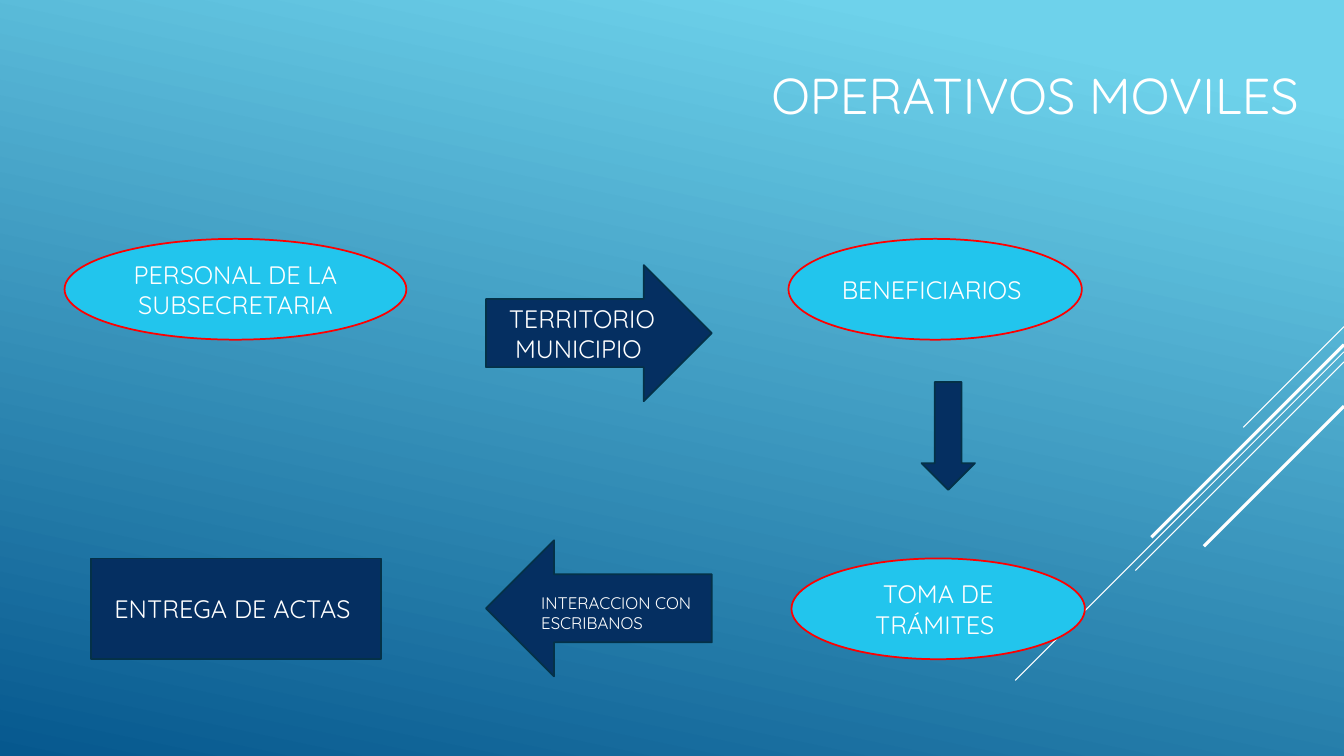
from dataclasses import dataclass

from lxml.etree import SubElement
from pptx import Presentation
from pptx.dml.color import RGBColor
from pptx.enum.shapes import MSO_CONNECTOR, MSO_SHAPE as Preset
from pptx.enum.text import MSO_ANCHOR as Anchor, MSO_AUTO_SIZE as AutoSize, PP_ALIGN as Align
from pptx.oxml.ns import qn
from pptx.slide import Slide
from pptx.text.text import TextFrame
from pptx.util import Inches, Pt

COLORS = {
    "white": "FFFFFF",
    "sky": "6ED2EB",
    "ocean": "06588E",
    "cyan": "22C5ED",
    "red": "FF0000",
    "navy": "052F61",
    "navy_edge": "043148",
}
FONT = "Quicksand"
SLIDE_WIDTH, SLIDE_HEIGHT = 13.33, 7.5
TOP_ROW, BOTTOM_ROW = 2.37, 5.54
BOX_HEIGHT = 1.0
ARROW_LEFT, ARROW_WIDTH, ARROW_HEIGHT = 4.82, 2.24, 1.35


@dataclass
class Diagonal:
    top: float
    reach: float
    weight: float


@dataclass
class Step:
    preset: Preset
    left: float
    top: float
    width: float
    height: float
    fill: str
    edge: str
    lines: tuple[str, ...] = ()
    rotation: float = 0


DIAGONALS = [
    Diagonal(3.24, 1.0, 0.75),
    Diagonal(3.49, 3.26, 0.75),
    Diagonal(3.59, 2.07, 0.75),
    Diagonal(3.42, 1.91, 2.25),
    Diagonal(4.03, 1.39, 2.25),
]


def ellipse(left: float, top: float, width: float, text: str) -> Step:
    return Step(Preset.OVAL, left, top, width, BOX_HEIGHT, "cyan", "red", (text,))


def navy(preset: Preset, left: float, top: float, width: float, height: float,
         lines: tuple[str, ...] = (), rotation: float = 0) -> Step:
    return Step(preset, left, top, width, height, "navy", "navy_edge", lines, rotation)


STEPS = [
    ellipse(0.64, TOP_ROW, 3.39, "PERSONAL DE LA SUBSECRETARIA"),
    ellipse(7.82, TOP_ROW, 2.91, "BENEFICIARIOS "),
    navy(Preset.RIGHT_ARROW, ARROW_LEFT, 2.63, ARROW_WIDTH, ARROW_HEIGHT,
         ("TERRITORIO", "MUNICIPIO ")),
    navy(Preset.DOWN_ARROW, 9.14, 3.79, 0.53, 1.07),
    ellipse(7.85, BOTTOM_ROW, 2.91, "TOMA DE TRÁMITES "),
    navy(Preset.RECTANGLE, 0.9, BOTTOM_ROW, 2.88, BOX_HEIGHT, ("ENTREGA DE ACTAS ",)),
    navy(Preset.RIGHT_ARROW, ARROW_LEFT, 5.36, ARROW_WIDTH, ARROW_HEIGHT, rotation=180),
]


def color(name: str) -> RGBColor:
    return RGBColor.from_string(COLORS[name])


def write_lines(frame: TextFrame, lines: tuple[str, ...], size: float, align: Align) -> None:
    for index, text in enumerate(lines):
        paragraph = frame.add_paragraph() if index else frame.paragraphs[0]
        paragraph.alignment = align
        run = paragraph.add_run()
        run.text = text
        run.font.name = FONT
        run.font.size = Pt(size)
        run.font.color.rgb = color("white")


def paint_background(slide: Slide) -> None:
    fill = slide.background.fill
    fill.gradient()
    fill.gradient_angle = 360 - 102
    for stop, name, position in zip(fill.gradient_stops, ("sky", "ocean"), (0.1, 1.0)):
        stop.color.rgb = color(name)
        stop.position = position


def add_diagonal(slide: Slide, diagonal: Diagonal) -> None:
    """Draw a 45-degree line down and left from the right edge."""
    connector = slide.shapes.add_connector(
        MSO_CONNECTOR.STRAIGHT,
        Inches(SLIDE_WIDTH), Inches(diagonal.top),
        Inches(SLIDE_WIDTH - diagonal.reach), Inches(diagonal.top + diagonal.reach),
    )
    connector.line.color.rgb = color("white")
    connector.line.width = Pt(diagonal.weight)
    SubElement(connector._element.spPr, qn("a:effectLst"))


def add_title(slide: Slide, text: str) -> None:
    title = slide.shapes.title
    title.left, title.top = Inches(7.55), Inches(0.11)
    title.width, title.height = Inches(5.78), Inches(1.65)
    title.text_frame.vertical_anchor = Anchor.MIDDLE
    write_lines(title.text_frame, (text,), 36, Align.LEFT)


def add_step(slide: Slide, step: Step) -> None:
    shape = slide.shapes.add_shape(
        step.preset, Inches(step.left), Inches(step.top), Inches(step.width), Inches(step.height)
    )
    shape.rotation = step.rotation
    shape.shadow.inherit = False
    shape.fill.solid()
    shape.fill.fore_color.rgb = color(step.fill)
    shape.line.color.rgb = color(step.edge)
    shape.line.width = Pt(1.25)
    shape.text_frame.vertical_anchor = Anchor.MIDDLE
    write_lines(shape.text_frame, step.lines, 18, Align.CENTER)


def add_notary_label(slide: Slide) -> None:
    box = slide.shapes.add_textbox(Inches(5.27), Inches(5.83), Inches(1.84), Inches(0.5))
    box.text_frame.word_wrap = False
    box.text_frame.auto_size = AutoSize.SHAPE_TO_FIT_TEXT
    write_lines(box.text_frame, ("INTERACCION CON", "ESCRIBANOS"), 12, Align.LEFT)


def main() -> None:
    presentation = Presentation()
    presentation.slide_width = Inches(SLIDE_WIDTH)
    presentation.slide_height = Inches(SLIDE_HEIGHT)
    slide = presentation.slides.add_slide(presentation.slide_layouts[5])
    paint_background(slide)
    for diagonal in DIAGONALS:
        add_diagonal(slide, diagonal)
    add_title(slide, "OPERATIVOS MOVILES")
    for step in STEPS:
        add_step(slide, step)
    add_notary_label(slide)
    presentation.save("out.pptx")


if __name__ == "__main__":
    main()
